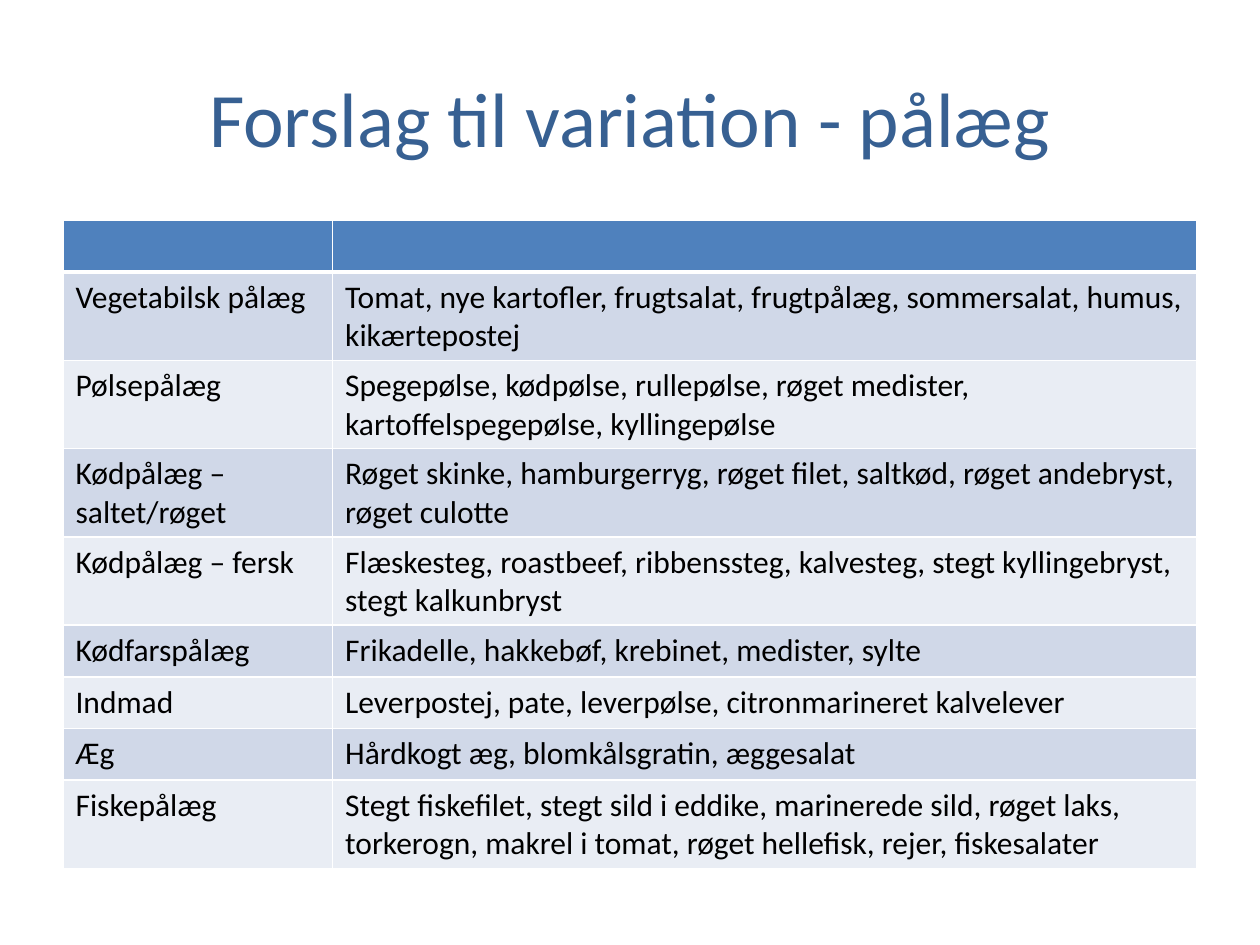
from lxml.etree import SubElement
from pptx import Presentation
from pptx.dml.color import RGBColor
from pptx.enum.text import MSO_ANCHOR as Anchor, PP_ALIGN as Align
from pptx.oxml.ns import qn
from pptx.util import Inches, Pt

FONT = "Calibri"
TITLE_BLUE, HEADER_BLUE = "376092", "4F81BD"
BAND_DARK, BAND_LIGHT = "D0D8E8", "E9EDF4"
WHITE, BLACK = "FFFFFF", "000000"

COLUMN_WIDTHS = [2.14, 6.86]
ROW_HEIGHT = 0.41

ROWS = [
    ("", ""),
    ("Vegetabilsk pålæg",
     "Tomat, nye kartofler, frugtsalat, frugtpålæg, sommersalat, humus, kikærtepostej"),
    ("Pølsepålæg",
     "Spegepølse, kødpølse, rullepølse, røget medister, "
     "kartoffelspegepølse, kyllingepølse"),
    ("Kødpålæg – saltet/røget",
     "Røget skinke, hamburgerryg, røget filet, saltkød, røget andebryst, røget culotte"),
    ("Kødpålæg – fersk",
     "Flæskesteg, roastbeef, ribbenssteg, kalvesteg, stegt kyllingebryst, "
     "stegt kalkunbryst"),
    ("Kødfarspålæg", "Frikadelle, hakkebøf, krebinet, medister, sylte"),
    ("Indmad", "Leverpostej, pate, leverpølse, citronmarineret kalvelever"),
    ("Æg", "Hårdkogt æg, blomkålsgratin, æggesalat"),
    ("Fiskepålæg",
     "Stegt fiskefilet, stegt sild i eddike, marinerede sild, røget laks, "
     "torkerogn, makrel i tomat, røget hellefisk, rejer, fiskesalater"),
]


def color(hex_string):
    return RGBColor.from_string(hex_string)


def add_run(paragraph, text, size, hex_string):
    run = paragraph.add_run()
    run.text = text
    run.font.name = FONT
    run.font.size = Pt(size)
    run.font.bold = False
    run.font.color.rgb = color(hex_string)


def add_title(slide, text):
    shape = slide.shapes.add_textbox(Inches(0.5), Inches(0.3), Inches(9), Inches(1.25))
    frame = shape.text_frame
    frame.word_wrap = True
    frame.vertical_anchor = Anchor.MIDDLE
    paragraph = frame.paragraphs[0]
    paragraph.alignment = Align.CENTER
    add_run(paragraph, text, 44, TITLE_BLUE)


def set_borders(cell, bottom_width):
    """Draw white borders; they must come before the fill in the XML."""
    properties = cell._tc.get_or_add_tcPr()
    for side, width in (("L", 1), ("R", 1), ("T", 1), ("B", bottom_width)):
        line = SubElement(properties, qn(f"a:ln{side}"), w=str(Pt(width)))
        fill = SubElement(line, qn("a:solidFill"))
        SubElement(fill, qn("a:srgbClr"), val=WHITE)


def fill_cell(cell, text, row_index):
    is_header = row_index == 0
    set_borders(cell, 3 if is_header else 1)
    band = BAND_DARK if row_index % 2 else BAND_LIGHT
    cell.fill.solid()
    cell.fill.fore_color.rgb = color(HEADER_BLUE if is_header else band)
    if text:
        add_run(cell.text_frame.paragraphs[0], text, 18, BLACK)


def add_food_table(slide):
    shape = slide.shapes.add_table(
        len(ROWS), len(COLUMN_WIDTHS), Inches(0.5), Inches(1.75), Inches(9), Inches(5.12))
    table = shape.table
    for column, width in zip(table.columns, COLUMN_WIDTHS):
        column.width = Inches(width)
    for row_index, texts in enumerate(ROWS):
        table.rows[row_index].height = Inches(ROW_HEIGHT)
        for column_index, text in enumerate(texts):
            fill_cell(table.cell(row_index, column_index), text, row_index)
    # Rows with two lines grow beyond the minimum height
    shape.height = Inches(5.12)


def main():
    presentation = Presentation()
    presentation.slide_width, presentation.slide_height = Inches(10), Inches(7.5)
    slide = presentation.slides.add_slide(presentation.slide_layouts[6])
    add_title(slide, "Forslag til variation - pålæg")
    add_food_table(slide)
    presentation.save("out.pptx")


if __name__ == "__main__":
    main()
